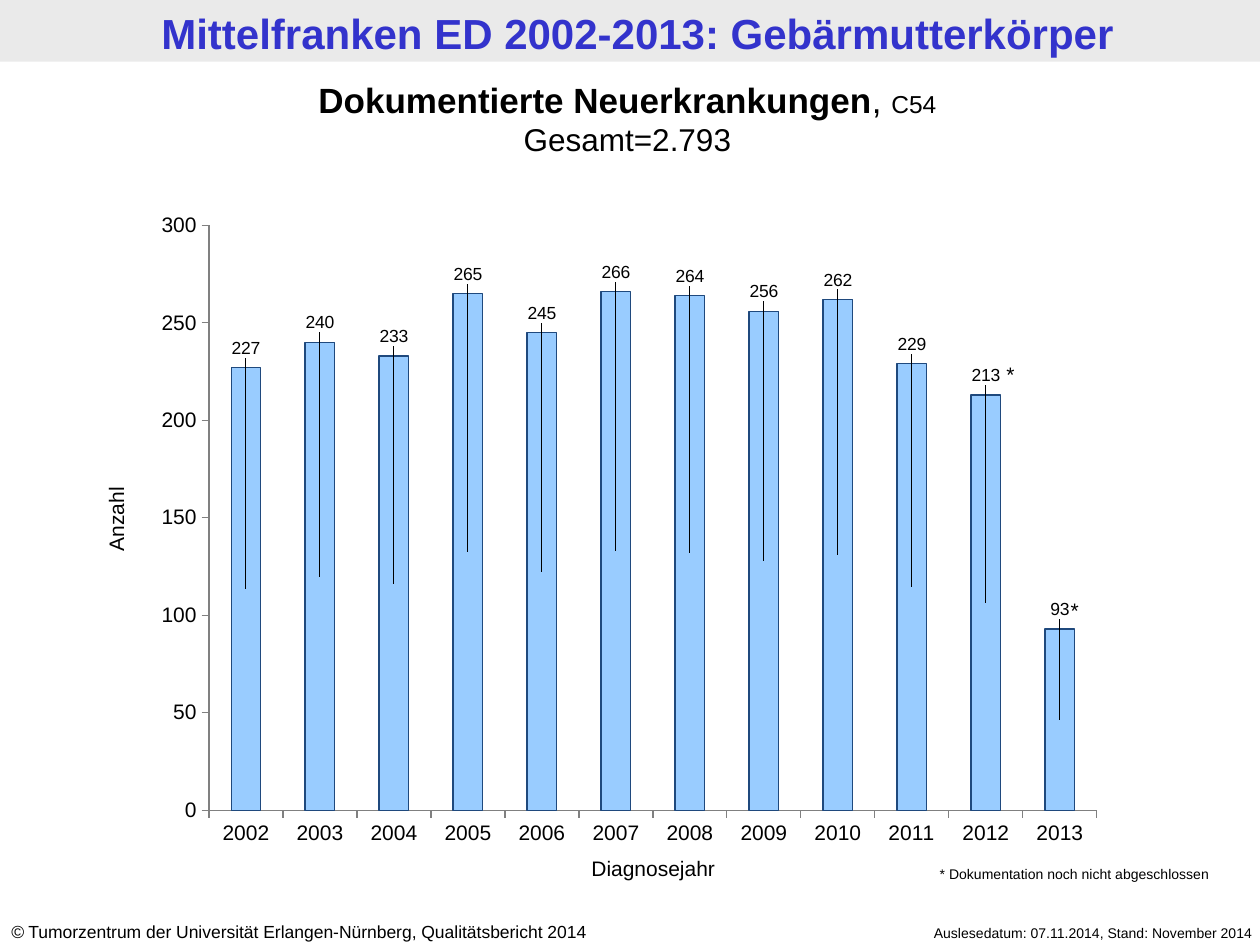
from lxml import etree
from pptx import Presentation
from pptx.chart.data import CategoryChartData
from pptx.dml.color import RGBColor
from pptx.enum.chart import XL_CHART_TYPE as ChartType, XL_TICK_MARK as TickMark
from pptx.enum.shapes import MSO_SHAPE as Shape
from pptx.enum.text import PP_ALIGN as Align
from pptx.oxml import parse_xml
from pptx.oxml.ns import nsdecls, qn
from pptx.util import Inches, Pt

COLORS = {
    "band": "EAEAEA", "title": "3333CC", "text": "000000",
    "bar": "99CCFF", "bar_line": "1F497D", "axis": "808080",
}
FONT = "Arial"
CASES = {
    "2002": 227, "2003": 240, "2004": 233, "2005": 265, "2006": 245, "2007": 266,
    "2008": 264, "2009": 256, "2010": 262, "2011": 229, "2012": 213, "2013": 93,
}
AXIS_MAX = 300
PLOT = {"x": 0.066, "y": 0.029, "w": 0.914, "h": 0.903}
LABEL_GAP = 0.03  # label centre above bar top, as a share of the chart height


def rgb(name):
    return RGBColor.from_string(COLORS[name])


def style_font(font, size, color="text", bold=False):
    font.name, font.size, font.bold = FONT, Pt(size), bold
    font.color.rgb = rgb(color)


def add_text(slide, box, lines, size, align=Align.LEFT, color="text", bold=False):
    """Each line is a list of (text, font overrides) runs."""
    shape = slide.shapes.add_textbox(*map(Inches, box))
    frame = shape.text_frame
    frame.word_wrap = True
    for index, runs in enumerate(lines):
        paragraph = frame.add_paragraph() if index else frame.paragraphs[0]
        paragraph.alignment = align
        style_font(paragraph.font, size, color, bold)
        for text, overrides in runs:
            run = paragraph.add_run()
            run.text = text
            for name, value in overrides.items():
                setattr(run.font, name, value)
    return shape


def add_header(slide, left, top, width, height):
    band = slide.shapes.add_shape(Shape.RECTANGLE, *map(Inches, (left, top, width, height)))
    band.shadow.inherit = False
    band.fill.solid()
    band.fill.fore_color.rgb = rgb("band")
    band.line.fill.background()
    title = "Mittelfranken ED 2002-2013: Gebärmutterkörper"
    add_text(slide, (left + 0.06, top + 0.01, width, height), [[(title, {})]],
             24, Align.CENTER, "title", True)


def add_subtitle(slide, box):
    lines = [
        [("Dokumentierte Neuerkrankungen", {"bold": True}), (", ", {}),
         ("C54", {"size": Pt(14)})],
        [("Gesamt=2.793", {"size": Pt(18)})],
    ]
    add_text(slide, box, lines, 20, Align.CENTER)


def manual_layout(values):
    layout = parse_xml(f"<c:layout {nsdecls('c')}><c:manualLayout/></c:layout>")
    for tag, value in values.items():
        etree.SubElement(layout[0], qn(f"c:{tag}")).set("val", str(value))
    return layout


def style_axis(axis):
    axis.has_major_gridlines = False
    axis.major_tick_mark = TickMark.OUTSIDE
    axis.minor_tick_mark = TickMark.NONE
    axis.format.line.color.rgb = rgb("axis")
    style_font(axis.tick_labels.font, 12)


def place_labels_above(series):
    """Lift the labels of stacked columns from the bar centres to above the bars."""
    for index, value in enumerate(CASES.values()):
        style_font(series.points[index].data_label.font, 10)
    labels = series.data_labels
    labels.show_value = True
    style_font(labels.font, 10)
    for label, value in zip(labels._element.findall(qn("c:dLbl")), CASES.values()):
        rise = value / AXIS_MAX * PLOT["h"] / 2 + LABEL_GAP
        label.find(qn("c:idx")).addnext(manual_layout({"x": 0, "y": round(-rise, 4)}))


def add_case_chart(slide, left, top, width, height):
    data = CategoryChartData()
    data.categories = list(CASES)
    data.add_series("Series 1", list(CASES.values()))
    chart = slide.shapes.add_chart(
        ChartType.COLUMN_STACKED, *map(Inches, (left, top, width, height)), data).chart
    chart.has_legend = chart.has_title = False
    style_font(chart.font, 12)
    style_axis(chart.category_axis)
    style_axis(chart.value_axis)
    chart.value_axis.minimum_scale = 0
    chart.value_axis.maximum_scale = AXIS_MAX
    chart.value_axis.major_unit = 50

    plot = chart.plots[0]
    plot.gap_width, plot.overlap, plot.vary_by_categories = 150, 100, False
    series = plot.series[0]
    series.format.fill.solid()
    series.format.fill.fore_color.rgb = rgb("bar")
    series.format.line.color.rgb = rgb("bar_line")
    series.format.line.width = Pt(0.75)
    place_labels_above(series)

    plot_area = chart._chartSpace.chart.plotArea
    for layout in plot_area.findall(qn("c:layout")):
        plot_area.remove(layout)
    plot_area.insert(0, manual_layout(
        {"layoutTarget": "inner", "xMode": "edge", "yMode": "edge", **PLOT}))

    add_text(slide, (left + 2.91, top + 5.1, 2.25, 0.3), [[("Diagnosejahr", {})]],
             12, Align.CENTER)
    count_title = add_text(slide, (left - 0.84, top + 2.33, 1.22, 0.3),
                           [[("Anzahl", {})]], 12, Align.CENTER)
    count_title.rotation = 270
    for x, y in ((6.61, 1.18), (7.12, 3.05)):
        add_text(slide, (left + x, top + y, 0.39, 0.3), [[("*", {})]], 12, Align.RIGHT)
    add_text(slide, (left + 6.21, top + 5.18, 2.7, 0.24),
             [[("* Dokumentation noch nicht abgeschlossen", {})]], 8)


def add_footer(slide, left, top, width):
    credit = " Tumorzentrum der Universität Erlangen-Nürnberg, Qualitätsbericht 2014"
    add_text(slide, (left, top, 5.24, 0.27),
             [[("©", {"italic": True}), (credit, {})]], 10)
    add_text(slide, (left + width - 3.39, top + 0.03, 3.39, 0.24),
             [[("Auslesedatum: 07.11.2014, Stand: November 2014", {})]], 8, Align.RIGHT)


def main():
    presentation = Presentation()
    presentation.slide_width, presentation.slide_height = Inches(10), Inches(7.5)
    slide = presentation.slides.add_slide(presentation.slide_layouts[6])
    add_header(slide, 0, 0, 10, 0.49)
    add_footer(slide, -0.01, 7.26, 10.05)
    add_case_chart(slide, 1.15, 1.64, 7.71, 5.14)
    add_subtitle(slide, (-0.04, 0.57, 10.04, 0.74))
    presentation.save("out.pptx")


if __name__ == "__main__":
    main()
